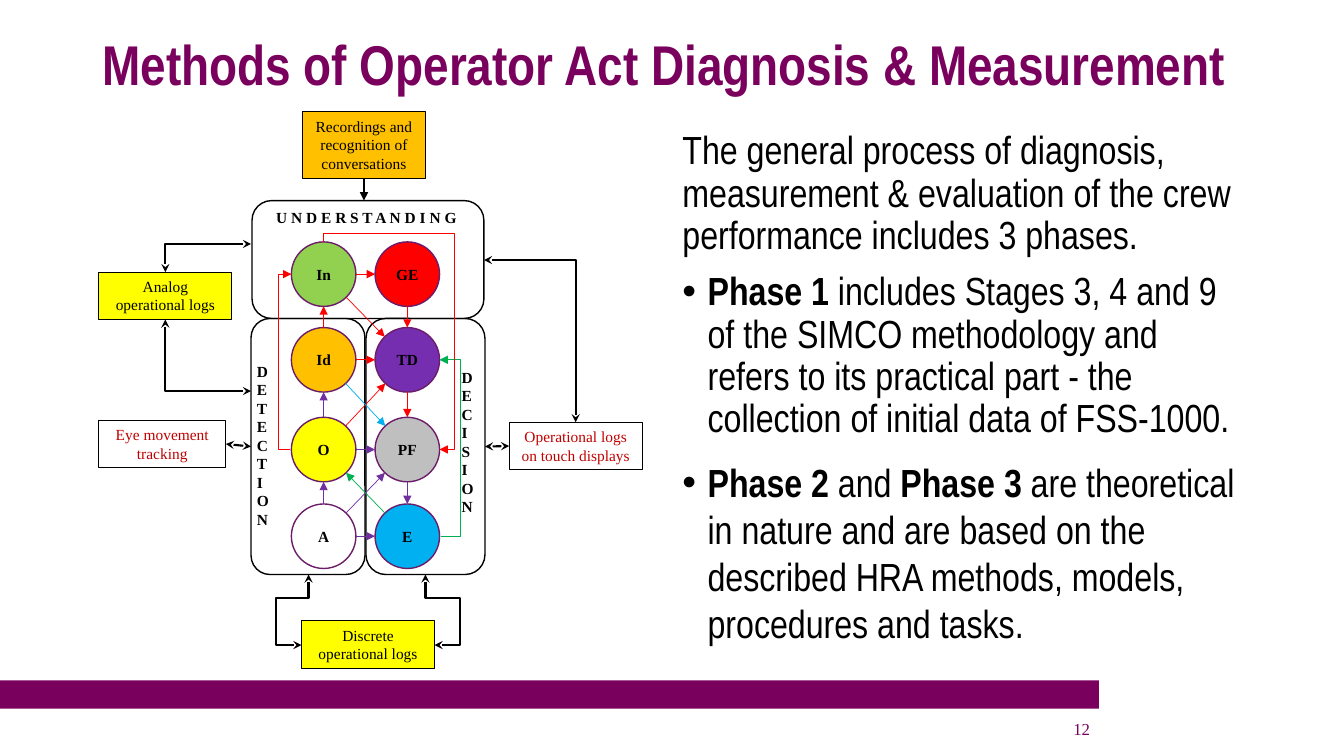
import math
from pptx import Presentation, util as u
from pptx.dml.color import RGBColor
from pptx.enum import shapes, text
from pptx.oxml import parse_xml
from pptx.oxml.ns import nsdecls, qn

hues = dict(plum="7A005E", black="000000", white="FFFFFF", red="FF0000",
            lime="92D050", violet="762EB1", amber="FFC000", gray="BFBFBF",
            yellow="FFFF00", sky="00B0F0", rim="6C1D6A", purple="7030A0",
            green="00B050", brick="C00000")
rgb = {k: RGBColor.from_string(v) for k, v in hues.items()}
roman, narrow = "Times New Roman", "Arial Narrow"
kind = shapes.MSO_SHAPE
mid, top = text.MSO_ANCHOR.MIDDLE, text.MSO_ANCHOR.TOP
left, center, right = text.PP_ALIGN.LEFT, text.PP_ALIGN.CENTER, text.PP_ALIGN.RIGHT

deck = Presentation()
deck.slide_width, deck.slide_height = u.Inches(13.33), u.Inches(7.5)
slide = deck.slides.add_slide(deck.slide_layouts[6])


def block(at, words="", form=None, fill=None, line=None, wide=1, size=11,
          face=roman, hue="black", bold=False, align=center, anchor=top, wrap=True):
    """Place a preset shape, or a text box when no form is given."""
    place = [u.Inches(v) for v in at]
    if form is None:
        item = slide.shapes.add_textbox(*place)
    else:
        item = slide.shapes.add_shape(form, *place)
        item.shadow.inherit = False
        for paint, tone in ((item.fill, fill), (item.line.fill, line)):
            if tone:
                paint.solid()
                paint.fore_color.rgb = rgb[tone]
            else:
                paint.background()
        if line:
            item.line.width = u.Pt(wide)
    frame = item.text_frame
    frame.word_wrap, frame.vertical_anchor = wrap, anchor
    if words:
        para = frame.paragraphs[0]
        para.alignment = align
        run = para.add_run()
        run.text = words
        look = dict(size=u.Pt(size), name=face, bold=bold)
        for key, val in look.items():
            setattr(run.font, key, val)
        run.font.color.rgb = rgb[hue]
    return item


def link(route, hue="black", wide=1.5, head=None, tail=None):
    """Join the route's points; a bent route leaves its start sideways."""
    (x, y), (ex, ey) = route[0], route[-1]
    bent = len(route) > 2
    form = shapes.MSO_CONNECTOR.ELBOW if bent else shapes.MSO_CONNECTOR.STRAIGHT
    wire = slide.shapes.add_connector(form, *[u.Inches(v) for v in (x, y, ex, ey)])
    wire.line.color.rgb, wire.line.width = rgb[hue], u.Pt(wide)
    props = wire._element.spPr
    if bent:
        geom = props.find(qn("a:prstGeom"))
        geom.set("prst", f"bentConnector{len(route) - 1}")
        bends = []
        if len(route) > 3:
            bends.append((route[1][0] - x) / (ex - x))
        if len(route) > 4:
            bends.append((route[2][1] - y) / (ey - y))
        for n, share in enumerate(bends, 1):
            geom.find(qn("a:avLst")).append(parse_xml(
                f'<a:gd {nsdecls("a")} name="adj{n}" fmla="val {round(share * 100000)}"/>'))
    for end, tip in (("headEnd", head), ("tailEnd", tail)):
        if tip:
            wire.line._get_or_add_ln().append(
                parse_xml(f'<a:{end} {nsdecls("a")} type="{tip}"/>'))
    props.append(parse_xml(f'<a:effectLst {nsdecls("a")}/>'))
    return wire


# Footer band, page number and title
block((0, 6.75, 10.9, 0.28), form=kind.RECTANGLE, fill="plum")
block((9.42, 7.03, 1.49, 0.4), "12", size=12, hue="plum", align=right, anchor=mid)
block((0.92, 0.31, 11.5, 0.64), "Methods of Operator Act Diagnosis & Measurement",
      size=40, face=narrow, hue="plum", bold=True, align=left, anchor=mid)

# Phases: bold flag with each run
body = block((6.67, 1.25, 5.75, 5.29)).text_frame
phases = [
    (0.9, 0, False, [("The general process of diagnosis, measurement & evaluation of the "
                      "crew performance includes 3 phases.", False)]),
    (0.9, 10, True, [("Phase 1", True),
                     (" includes Stages 3, 4 and 9 of the SIMCO methodology and refers to its "
                      "practical part - the collection of initial data of FSS-1000.", False)]),
    (1.0, 12, True, [("Phase 2 ", True), ("and ", False), ("Phase 3", True),
                     (" are theoretical in nature and are based on the described HRA methods, "
                      "models, procedures and tasks.", False)]),
]
for n, (pitch, gap, dot, runs) in enumerate(phases):
    para = body.add_paragraph() if n else body.paragraphs[0]
    para.line_spacing = pitch
    if gap:
        para.space_before = u.Pt(gap)
    if dot:
        props = para._p.get_or_add_pPr()
        props.set("marL", str(u.Inches(0.25)))
        props.set("indent", str(-u.Inches(0.25)))
        props.append(parse_xml(f'<a:buFont {nsdecls("a")} typeface="Arial"/>'))
        props.append(parse_xml(f'<a:buChar {nsdecls("a")} char="•"/>'))
    for words, bold in runs:
        run = para.add_run()
        run.text = words
        for key, val in dict(size=u.Pt(28), name=narrow, bold=bold).items():
            setattr(run.font, key, val)
        run.font.color.rgb = rgb["black"]

# Stage frames
areas = [block(at, form=kind.ROUNDED_RECTANGLE, line="black")
         for at in ((2.5, 1.99, 2.3, 1.17), (2.49, 3.16, 1.13, 2.54), (3.63, 3.16, 1.18, 2.54))]
grasp, detect, decide = areas

# Act circles on two columns and four rows
cols, rows, rad = (3.21, 4.04), (2.72, 3.57, 4.46, 5.32), 0.32
acts = [("In", "lime"), ("GE", "red"), ("Id", "amber"), ("TD", "violet"),
        ("O", "yellow"), ("PF", "gray"), ("A", None), ("E", "sky")]
spot = {}
for n, (name, fill) in enumerate(acts):
    x, y = spot[name] = cols[n % 2], rows[n // 2]
    disc = block((x - rad, y - rad, 2 * rad, 2 * rad), name, kind.OVAL, fill, "rim",
                 bold=True, anchor=mid, wrap=False)
    for side in ("left", "right", "top", "bottom"):
        setattr(disc.text_frame, f"margin_{side}", 0)

# Straight arrows run from rim to rim
flows = {"red": "In-GE GE-TD In-TD Id-TD TD-PF Id-In O-TD",
         "purple": "A-E O-PF A-O PF-E O-Id A-PF", "green": "E-O", "sky": "Id-PF"}
for hue, pairs in flows.items():
    for pair in pairs.split():
        (x, y), (ex, ey) = [spot[name] for name in pair.split("-")]
        far = math.dist((x, y), (ex, ey))
        dx, dy = rad * (ex - x) / far, rad * (ey - y) / far
        link([(x + dx, y + dy), (ex - dx, ey - dy)], hue, 0.5, tail="triangle")

# Bent arrows around the circles
west, east = cols[0] - rad, cols[1] + rad
link([(east + 0.01, rows[3]), (4.57, rows[3]), (4.57, rows[1]), (east, rows[1])],
     "green", 0.5, tail="triangle")
link([(west - 0.01, rows[2]), (2.76, rows[2]), (2.76, rows[0]), (west, rows[0])],
     "red", 0.5, tail="triangle")
link([(east, rows[2]), (4.51, rows[2]), (4.51, 2.32), (cols[0], 2.32),
      (cols[0], rows[0] - rad)], "red", 0.5, head="triangle")

# Stage names
for words, at, stack in (("DETECTION", (2.45, 3.54, 0.4, 1.89), True),
                         ("DECISION", (4.48, 3.6, 0.4, 1.7), True),
                         ("U N D E R S T A N D I N G", (2.64, 2.02, 2.03, 0.29), False)):
    label = block(at, words, bold=True, align=left, wrap=False)
    if stack:
        label.text_frame._txBody.bodyPr.set("vert", "wordArtVert")

# Data sources
eye, disc, talk, log, touch = [
    block(at, words, kind.RECTANGLE, fill, "black", 0.75, hue=hue)
    for words, at, fill, hue in (
        ("Eye movement tracking", (0.98, 4.17, 1.26, 0.47), "white", "brick"),
        ("Discrete operational logs", (2.99, 6.16, 1.32, 0.47), "yellow", "black"),
        ("Recordings and recognition of conversations", (3, 1.11, 1.22, 0.66), "amber", "black"),
        ("Analog operational logs", (0.98, 2.7, 1.32, 0.47), "yellow", "black"),
        ("Operational logs on touch displays", (5.05, 4.19, 1.32, 0.47), "white", "brick"))]

# Links between sources and stages
for route in ([(2.49, 2.42), (1.64, 2.42), (1.64, 2.7)],
              [(2.49, 3.88), (1.64, 3.88), (1.64, 3.17)],
              [(2.99, 6.4), (2.74, 6.4), (2.74, 5.93), (3.06, 5.93), (3.06, 5.7)],
              [(4.31, 6.4), (4.56, 6.4), (4.56, 5.93), (4.22, 5.93), (4.22, 5.7)],
              [(4.8, 2.58), (5.71, 2.58), (5.71, 4.19)]):
    link(route, head="stealth", tail="stealth")
link([(3.61, 1.77), (3.61, 1.99)], tail="triangle").begin_connect(talk, 2)
for start, a, stop, b in ((touch, 1, decide, 3), (detect, 1, eye, 3)):
    wire = link([(0, 0), (1, 1)], head="stealth", tail="stealth")
    wire.begin_connect(start, a)
    wire.end_connect(stop, b)

deck.save("out.pptx")
